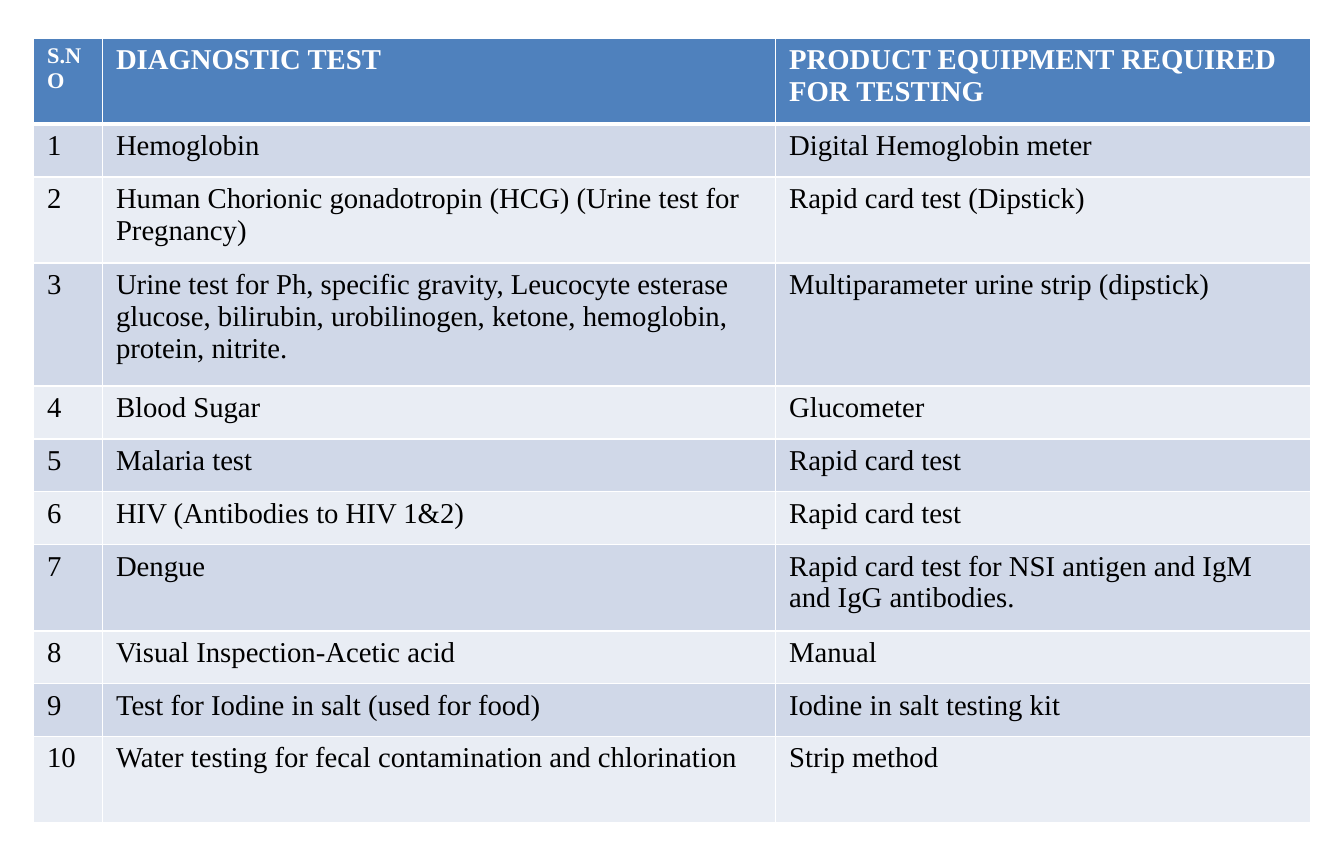
from pptx import Presentation
from pptx.dml.color import RGBColor as RGB
from pptx.oxml import parse_xml
from pptx.oxml.ns import nsdecls
from pptx.util import Inches, Pt

WHITE = RGB(0xFF, 0xFF, 0xFF)
BLACK = RGB(0x00, 0x00, 0x00)
BLUE = RGB(0x4F, 0x81, 0xBD)
DARK = RGB(0xD0, 0xD8, 0xE8)
PALE = RGB(0xE9, 0xED, 0xF4)

FONT = "Times New Roman"
HEAD = ("S.NO", "DIAGNOSTIC TEST", "PRODUCT EQUIPMENT REQUIRED FOR TESTING")
TESTS = [
    ("Hemoglobin", "Digital Hemoglobin meter"),
    ("Human Chorionic gonadotropin (HCG) (Urine test for Pregnancy)",
     "Rapid card test (Dipstick)"),
    ("Urine test for Ph, specific gravity, Leucocyte esterase glucose, "
     "bilirubin, urobilinogen, ketone, hemoglobin, protein, nitrite.",
     "Multiparameter urine strip (dipstick)"),
    ("Blood Sugar", "Glucometer"),
    ("Malaria test", "Rapid card test"),
    ("HIV (Antibodies to HIV 1&2)", "Rapid card test"),
    ("Dengue", "Rapid card test for NSI antigen and IgM and IgG antibodies."),
    ("Visual Inspection-Acetic acid", "Manual"),
    ("Test for Iodine in salt (used for food)", "Iodine in salt testing kit"),
    ("Water testing for fecal contamination and chlorination", "Strip method"),
]
ROWS = [HEAD] + [(str(n), *test) for n, test in enumerate(TESTS, 1)]
WIDTHS = (0.6, 5.86, 4.66)
ONE, TWO, THREE = 0.46, 0.75, 1.07
HEIGHTS = (TWO, ONE, TWO, THREE, ONE, ONE, ONE, TWO, ONE, ONE, TWO)


def edge(cell, side, width):
    cell._tc.get_or_add_tcPr().append(parse_xml(
        f'<a:{side} {nsdecls("a")} w="{Pt(width)}"><a:solidFill>'
        f'<a:srgbClr val="{WHITE}"/></a:solidFill></a:{side}>'))


deck = Presentation()
deck.slide_width, deck.slide_height = Inches(11.7), Inches(7.5)
slide = deck.slides.add_slide(deck.slide_layouts[6])

frame = slide.shapes.add_table(
    len(ROWS), len(WIDTHS), Inches(0.29), Inches(0.33),
    Inches(sum(WIDTHS)), Inches(sum(HEIGHTS)))
table = frame.table
for col, width in zip(table.columns, WIDTHS):
    col.width = Inches(width)

for r, (row, high, texts) in enumerate(zip(table.rows, HEIGHTS, ROWS)):
    row.height = Inches(high)
    top = r == 0
    for c, (cell, text) in enumerate(zip(row.cells, texts)):
        for side in ("lnL", "lnR", "lnT", "lnB"):
            thick = (r, side) in ((0, "lnB"), (1, "lnT"))
            edge(cell, side, 3 if thick else 1)
        cell.fill.solid()
        cell.fill.fore_color.rgb = BLUE if top else DARK if r % 2 else PALE
        cell.margin_left = cell.margin_right = Inches(0.12)
        cell.margin_top = cell.margin_bottom = Inches(0.05)
        run = cell.text_frame.paragraphs[0].add_run()
        run.text = text
        run.font.name = FONT
        run.font.size = Pt(14 if top and c == 0 else 18)
        run.font.bold = top
        run.font.color.rgb = WHITE if top else BLACK

deck.save("out.pptx")
